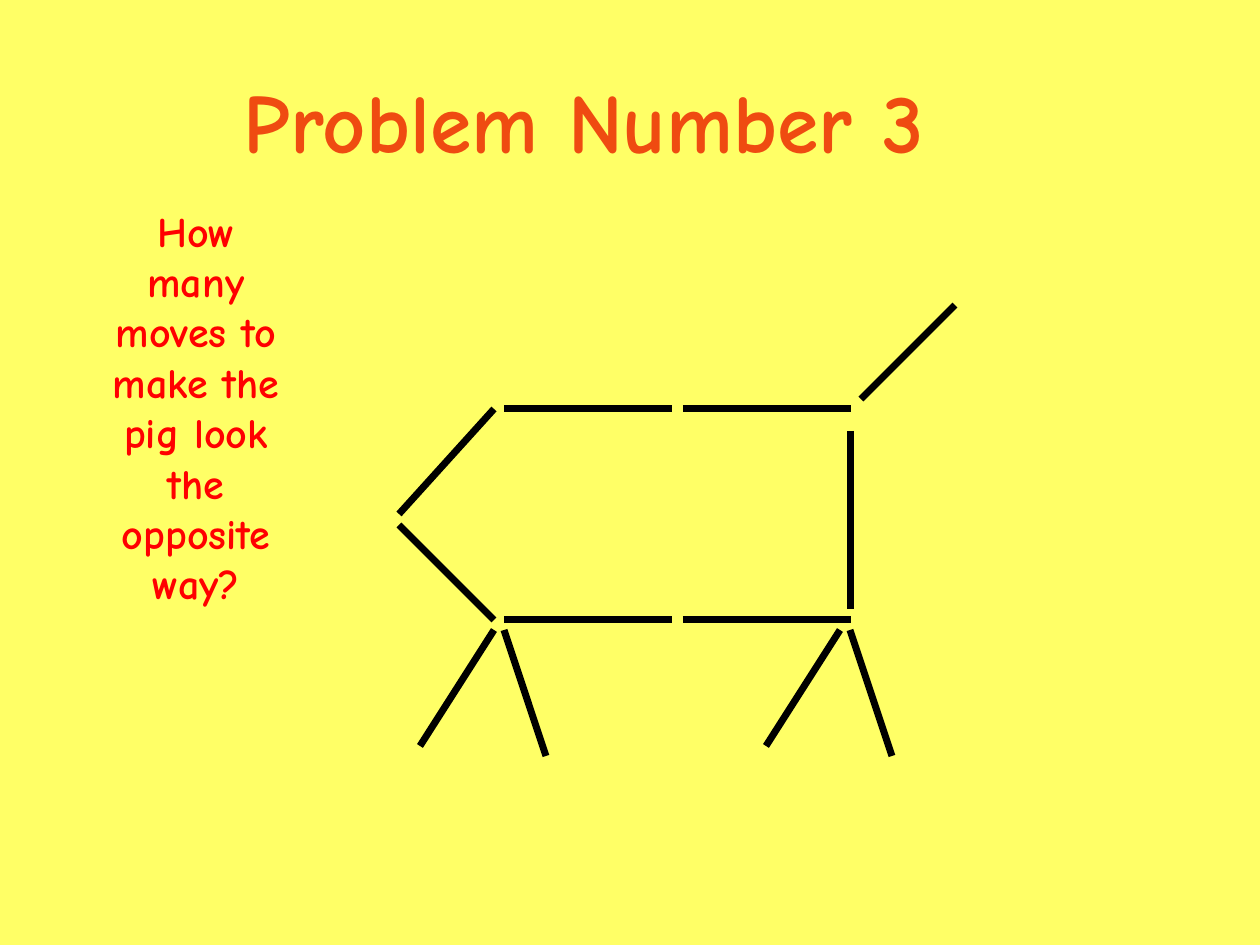
from pptx import Presentation
from pptx.dml.color import RGBColor
from pptx.enum.shapes import MSO_CONNECTOR as Conn
from pptx.enum.text import MSO_ANCHOR as Anchor, MSO_AUTO_SIZE as Fit, PP_ALIGN as Align
from pptx.oxml.ns import qn
from pptx.util import Emu, Pt
from lxml.etree import SubElement

PX = 914400 / 126


def px(*vals):
    return [Emu(round(v * PX)) for v in vals]


def tint(code):
    return RGBColor.from_string(code)


# Slide and background
deck = Presentation()
deck.slide_width, deck.slide_height = px(1260, 945)
slide = deck.slides.add_slide(deck.slide_layouts[5])
back = slide.background.fill
back.solid()
back.fore_color.rgb = tint("FFFF66")

# Title and question
title = slide.shapes.title
title.left, title.top, title.width, title.height = px(231, 63, 882, 173)
ask = slide.shapes.add_textbox(*px(95, 199, 202, 465))
texts = [
    (title, "Problem Number 3", Align.LEFT, "EF4B11", 48),
    (ask, "How many moves to make the pig look the opposite way?",
     Align.CENTER, "FF0000", 24),
]
for box, words, align, color, size in texts:
    frame = box.text_frame
    frame.text = words
    look = {"word_wrap": True, "auto_size": Fit.NONE, "vertical_anchor": Anchor.TOP}
    for key, val in look.items():
        setattr(frame, key, val)
    para = frame.paragraphs[0]
    para.alignment = align
    font = para.runs[0].font
    for key, val in {"name": "Comic Neue", "size": Pt(size), "bold": True}.items():
        setattr(font, key, val)
    font.color.rgb = tint(color)

# Pig: head and tail
sticks = [
    (399, 514, 494, 409),
    (399, 525, 494, 620),
    (861, 399, 955, 305),
]
# Back and belly, two sticks each
for y in (409, 620):
    for x in (504, 683):
        sticks.append((x, y, x + 168, y))
# Rump
sticks.append((851, 431, 851, 609))
# Front and hind legs
for x in (494, 840):
    sticks.append((x, 630, x - 74, 746))
    sticks.append((x + 10, 630, x + 52, 756))

for ends in sticks:
    stick = slide.shapes.add_connector(Conn.STRAIGHT, *px(*ends))
    stick.line.width = Pt(4)
    stick.line.color.rgb = tint("000000")
    SubElement(stick.element.spPr, qn("a:effectLst"))

deck.save("out.pptx")
